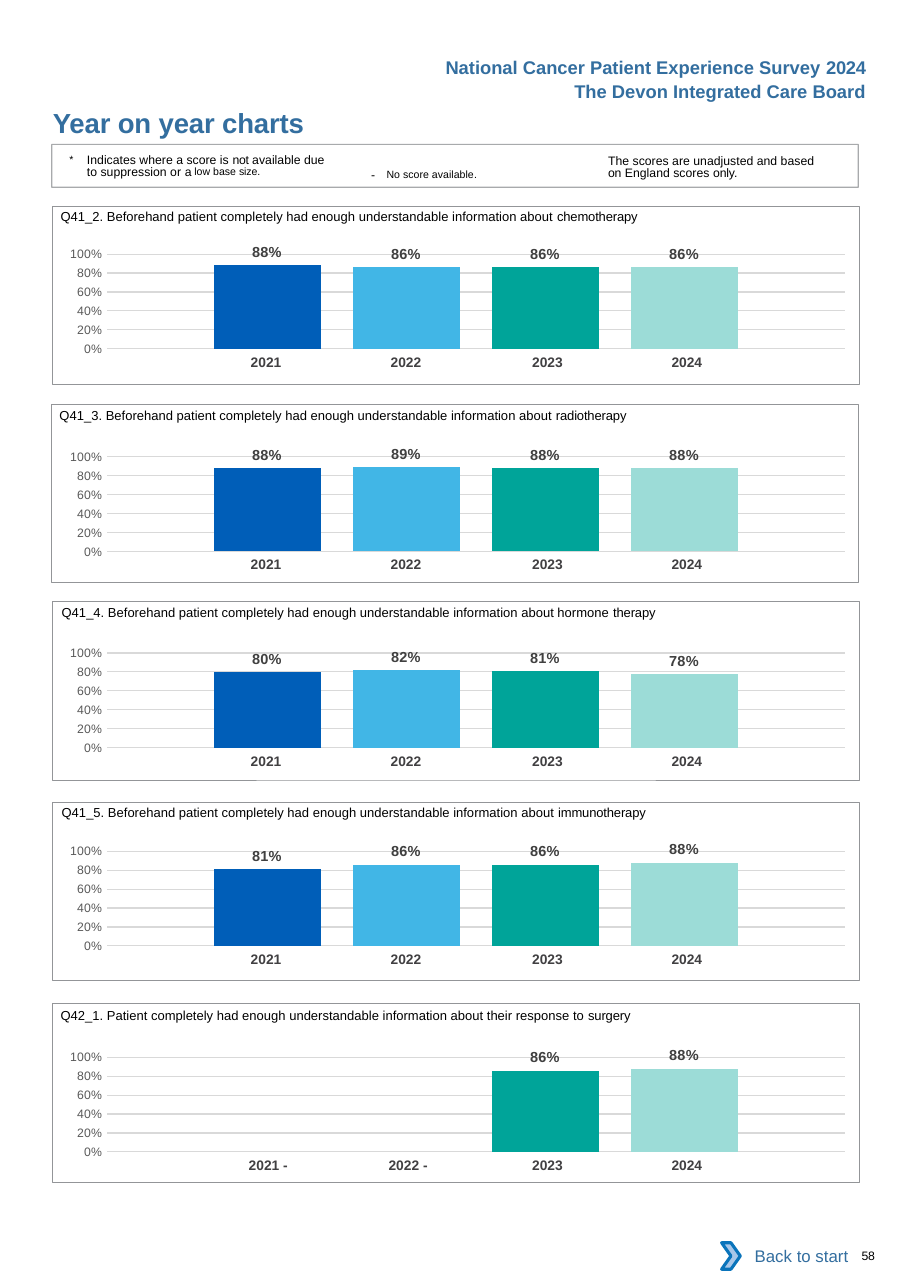
from dataclasses import dataclass

from lxml import etree
from pptx import Presentation
from pptx.chart.data import CategoryChartData
from pptx.dml.color import RGBColor
from pptx.enum.chart import XL_CHART_TYPE, XL_LABEL_POSITION, XL_TICK_MARK
from pptx.enum.shapes import MSO_SHAPE
from pptx.enum.text import MSO_ANCHOR, PP_ALIGN
from pptx.oxml import parse_xml
from pptx.oxml.ns import nsdecls, qn
from pptx.util import Inches, Pt

RECTANGLE, CHEVRON = MSO_SHAPE.RECTANGLE, MSO_SHAPE.CHEVRON
LEFT, CENTER, RIGHT = PP_ALIGN.LEFT, PP_ALIGN.CENTER, PP_ALIGN.RIGHT
MIDDLE = MSO_ANCHOR.MIDDLE
COLUMNS = XL_CHART_TYPE.COLUMN_CLUSTERED
OUTSIDE_END = XL_LABEL_POSITION.OUTSIDE_END
NO_TICKS = XL_TICK_MARK.NONE
NO_TABLE_STYLE = "{2D5ABB26-0587-4C30-8999-92F81FD0307C}"


class Theme:
    font, chart_font = "Arial", "Calibri"
    black, white, blue = "000000", "FFFFFF", "336E9F"
    frame, year, axis = "939598", "414042", "595959"
    grid, label = "D9D9D9", "404040"
    arrow_fill, arrow_line = "A8C7E9", "0A74BB"
    bars = ["005EB8", "41B6E6", "00A499", "9CDCD7"]
    title, header, link, question = 18, 12, 11, 8.5
    small, raised, year_size, label_size, chart_size = 8, 12, 9, 9.5, 10


@dataclass
class Panel:
    question: str
    ending: str
    scores: list
    frame: tuple
    heading: tuple
    chart_top: float
    space_before: float = 6.8
    missing: int = 0


class Deck:
    def __init__(self, theme, width, height):
        self.theme = theme
        self.presentation = Presentation()
        self.presentation.slide_width = Inches(width)
        self.presentation.slide_height = Inches(height)
        self.page = self.presentation.slides.add_slide(self.presentation.slide_layouts[6])

    @staticmethod
    def color(value):
        return RGBColor.from_string(value)

    def style(self, font, size, color, bold=False):
        font.name, font.size, font.bold = self.theme.font, Pt(size), bold
        font.color.rgb = self.color(color)

    def add_runs(self, frame, runs, size, color=Theme.black, bold=False, align=LEFT,
                 before=0, spacing=None, hanging=0):
        """Each run is (text, letter spacing, baseline, size); all but text optional."""
        para = frame.paragraphs[0]
        para.alignment, para.space_before = align, Pt(before)
        if spacing:
            para.line_spacing = Pt(spacing)
        if hanging:
            properties = para._p.get_or_add_pPr()
            properties.set("marL", str(Inches(hanging)))
            properties.set("indent", str(-Inches(hanging)))
        for text, tracking, baseline, own_size in (run + (0, 0, 0)[len(run) - 1:] for run in runs):
            span = para.add_run()
            span.text = text
            self.style(span.font, own_size or size, color, bold)
            if tracking:
                span.font._element.set("spc", str(round(tracking * 100)))
            if baseline:
                span.font._element.set("baseline", str(baseline * 1000))

    @staticmethod
    def inset(target, left, top, right, bottom):
        target.margin_left, target.margin_top = Inches(left), Inches(top)
        target.margin_right, target.margin_bottom = Inches(right), Inches(bottom)

    def text(self, place, runs, size, margins=(0, 0, 0, 0), **options):
        box = self.page.shapes.add_textbox(*map(Inches, place))
        frame = box.text_frame
        frame.word_wrap = True
        self.inset(frame, *margins)
        self.add_runs(frame, runs, size, **options)

    def shape(self, kind, place, fill=None, line=None, weight=0.5):
        shape = self.page.shapes.add_shape(kind, *map(Inches, place))
        shape.shadow.inherit = False
        if fill:
            shape.fill.solid()
            shape.fill.fore_color.rgb = self.color(fill)
        else:
            shape.fill.background()
        if line:
            shape.line.color.rgb = self.color(line)
            shape.line.width = Pt(weight)
        else:
            shape.line.fill.background()
        return shape

    def years(self, top, missing):
        widths = [1.27, 1.27, 1.34, 1.27]
        place = map(Inches, (1.73, top, sum(widths), 0.27))
        table = self.page.shapes.add_table(1, len(widths), *place).table
        table.first_row = table.horz_banding = False
        table._tbl.tblPr.find(qn("a:tableStyleId")).text = NO_TABLE_STYLE
        for index, (width, right) in enumerate(zip(widths, (0, 0, 0.04, 0.12))):
            table.columns[index].width = Inches(width)
            cell = table.cell(0, index)
            cell.fill.background()
            absent = index < missing
            self.inset(cell, 0.14 if absent else 0.1, 0.05, right, 0.05)
            label = f"{2021 + index} -" if absent else str(2021 + index)
            self.add_runs(cell.text_frame, [(label,)], self.theme.year_size,
                          self.theme.year, bold=True, align=CENTER)

    def chart(self, top, scores):
        theme = self.theme
        data = CategoryChartData(number_format="0%")
        data.categories = ["1"]
        for number, score in enumerate(scores, 1):
            data.add_series(f"Series {number}", [score])
        place = map(Inches, (0.39, top, 7.32, 1.29))
        chart = self.page.shapes.add_chart(COLUMNS, *place, data).chart
        chart.has_legend = chart.has_title = False
        chart.font.name, chart.font.size = theme.chart_font, Pt(theme.chart_size)
        chart.font.color.rgb = self.color(theme.black)

        # Axes and grid
        chart.category_axis.visible = False
        axis = chart.value_axis
        axis.minimum_scale, axis.maximum_scale, axis.major_unit = 0, 1, 0.2
        axis.major_tick_mark = axis.minor_tick_mark = NO_TICKS
        axis.format.line.fill.background()
        axis.major_gridlines.format.line.color.rgb = self.color(theme.grid)
        axis.major_gridlines.format.line.width = Pt(0.75)
        axis.tick_labels.number_format = "0%"
        axis.tick_labels.number_format_is_linked = False
        self.style(axis.tick_labels.font, theme.small, theme.axis)

        # Bars and their labels
        plot = chart.plots[0]
        plot.gap_width, plot.overlap, plot.vary_by_categories = 200, -30, False
        for series, bar in zip(plot.series, theme.bars):
            series.format.fill.solid()
            series.format.fill.fore_color.rgb = self.color(bar)
            labels = series.data_labels
            labels.show_value, labels.position = True, OUTSIDE_END
            labels.number_format, labels.number_format_is_linked = "0%", False
            self.style(labels.font, theme.label_size, theme.label, bold=True)

        # Inner plot area
        area = chart._chartSpace.chart.plotArea
        for old in area.findall(qn("c:layout")):
            area.remove(old)
        parts = [("layoutTarget", "inner"), ("xMode", "edge"), ("yMode", "edge"),
                 ("x", 0.079), ("y", 0.145), ("w", 0.915), ("h", 0.666)]
        inside = "".join(f'<c:{name} val="{value}"/>' for name, value in parts)
        area.insert(0, parse_xml(f'<c:layout {nsdecls("c")}><c:manualLayout>{inside}'
                                 "</c:manualLayout></c:layout>"))

    def panel(self, panel):
        self.years(panel.chart_top + 1.05, panel.missing)
        self.chart(panel.chart_top, panel.scores)
        self.shape(RECTANGLE, panel.frame + (7.32, 1.62), line=self.theme.frame)
        self.text(panel.heading + (7.2, 0.24), [(panel.question + " ",), (panel.ending, -0.1)],
                  self.theme.question, margins=(0, 0.09, 0, 0), before=panel.space_before)


INFORMATION = "Beforehand patient completely had enough understandable information about"
PANELS = [
    Panel(f"Q41_2. {INFORMATION}", "chemotherapy", [0.88, 0.86, 0.86, 0.86],
          (0.48, 1.87), (0.55, 1.8), 2.12, space_before=0.7),
    Panel(f"Q41_3. {INFORMATION}", "radiotherapy", [0.88, 0.89, 0.88, 0.88],
          (0.47, 3.67), (0.54, 3.61), 3.96),
    Panel(f"Q41_4. {INFORMATION} hormone", "therapy", [0.8, 0.82, 0.81, 0.78],
          (0.48, 5.46), (0.56, 5.4), 5.74),
    Panel(f"Q41_5. {INFORMATION}", "immunotherapy", [0.81, 0.86, 0.86, 0.88],
          (0.48, 7.28), (0.56, 7.21), 7.54),
    Panel("Q42_1. Patient completely had enough understandable information about their response to",
          "surgery", [None, None, 0.86, 0.88], (0.48, 9.11), (0.55, 9.05), 9.41, missing=2),
]


def main():
    theme = Theme()
    deck = Deck(theme, 8.26, 11.69)

    # Page heading
    headers = [[("National Cancer Patient Experience Survey ",), ("2024", -0.2)],
               [("The Devon Integrated Care Board",)]]
    for top, runs in zip((0.46, 0.68), headers):
        deck.text((3.46, top, 4.5, 0.3), runs, theme.header, margins=(0.1, 0.05, 0.1, 0.05),
                  color=theme.blue, bold=True, align=RIGHT)
    deck.text((0.48, 0.96, 4.5, 0.3), [("Year on year charts", -0.1)], theme.title,
              color=theme.blue, bold=True, before=4.1)

    # Notes on the scores
    raised = theme.raised
    deck.text((0.63, 1.38, 2.4, 0.3),
              [("*\t", 0, 3, raised), ("Indicates where a score is ",), ("not ", -0.2),
               ("available due to suppression or ",), ("a ", -0.5),
               ("low base", 0, 7, raised), (" size.", -0.1, 7, raised)],
              theme.small, margins=(0, 0.03, 0, 0), before=2.5, spacing=8.1, hanging=0.16)
    deck.text((3.27, 1.41, 1.83, 0.24),
              [("- ", 2.6), ("No score available", 0, 3, raised), (".", -0.1, 3, raised)],
              theme.small, margins=(0.1, 0.05, 0.1, 0.05), before=2.1)
    deck.text((5.52, 1.38, 2, 0.27),
              [("The scores are unadjusted and based",), (" on", -0.2),
               (" England scores ",), ("only.", -0.1)],
              theme.small, margins=(0, 0.03, 0, 0), before=2.5, spacing=8.1)
    notes = deck.shape(RECTANGLE, (0.47, 1.31, 7.32, 0.39), line=theme.frame, weight=0.75)
    line_color = notes.line._ln.find(".//" + qn("a:srgbClr"))
    etree.SubElement(line_color, qn("a:alpha")).set("val", "80000")

    # Yearly scores for each question
    for panel in PANELS:
        deck.panel(panel)

    # Footer
    link = deck.shape(RECTANGLE, (6.62, 11.19, 1.18, 0.42), fill=theme.white)
    link.text_frame.vertical_anchor = MIDDLE
    deck.add_runs(link.text_frame, [("Back to start",)], theme.link, theme.blue, align=RIGHT)
    deck.shape(CHEVRON, (6.55, 11.28, 0.17, 0.24), theme.arrow_fill, theme.arrow_line, 2)
    deck.text((7.82, 11.33, 0.41, 0.13), [("58", -0.2)], theme.small, before=0.2)

    deck.presentation.save("out.pptx")


if __name__ == "__main__":
    main()
